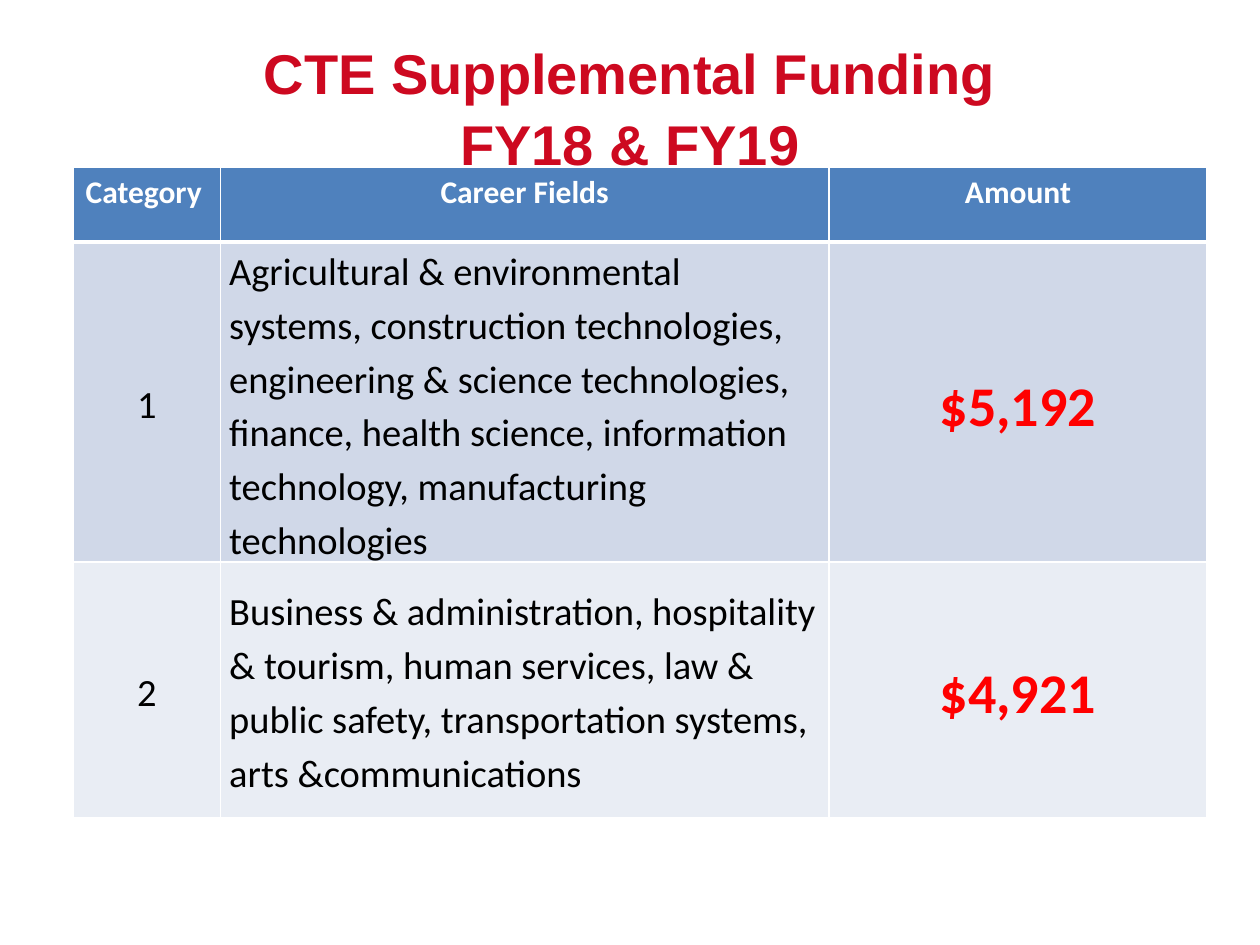
from lxml import etree
from pptx import Presentation
from pptx.dml.color import RGBColor
from pptx.enum.text import MSO_ANCHOR as Anchor, PP_ALIGN as Align
from pptx.oxml.ns import qn
from pptx.util import Inches, Pt

COLORS = {
    "title": "CD0920",
    "header": "4F81BD",
    "bands": ["D0D8E8", "E9EDF4"],
    "white": "FFFFFF",
    "text": "000000",
    "amount": "FF0000",
}
HEADERS = ["Category", "Career Fields", "Amount"]
FUNDING = [
    ("1", "Agricultural & environmental systems, construction technologies, "
          "engineering & science technologies, finance, health science, "
          "information technology, manufacturing technologies", "$5,192"),
    ("2", "Business & administration, hospitality & tourism, human services, "
          "law & public safety, transportation systems, arts &communications",
     "$4,921"),
]
COL_WIDTHS = [1.17, 4.83, 3]
ROW_HEIGHTS = [0.59, 2.54, 2.03]


class Deck:
    title_font = "Arial"
    body_font = "Calibri"

    def __init__(self, prs):
        self.slide = prs.slides.add_slide(prs.slide_layouts[6])

    def run(self, p, text, size, color, font, bold=False):
        r = p.add_run()
        r.text = text
        r.font.size, r.font.name, r.font.bold = Pt(size), font, bold
        r.font.color.rgb = RGBColor.from_string(color)

    def title(self, lines, left, top, width, height):
        sp = self.slide.shapes.add_textbox(
            Inches(left), Inches(top), Inches(width), Inches(height))
        tf = sp.text_frame
        tf.word_wrap = True
        tf.vertical_anchor = Anchor.MIDDLE
        tf.margin_left = tf.margin_right = tf.margin_top = tf.margin_bottom = 0
        p = tf.paragraphs[0]
        p.alignment, p.line_spacing = Align.CENTER, 1.05
        for i, line in enumerate(lines):
            if i:
                p.add_line_break()
            self.run(p, line, 32, COLORS["title"], self.title_font, bold=True)

    def table(self, left, top, col_widths, row_heights):
        table = self.slide.shapes.add_table(
            len(row_heights), len(col_widths), Inches(left), Inches(top),
            Inches(sum(col_widths)), Inches(sum(row_heights))).table
        for column, width in zip(table.columns, col_widths):
            column.width = Inches(width)
        for row, height in zip(table.rows, row_heights):
            row.height = Inches(height)
        return table

    def borders(self, cell, **widths):
        """Draw white borders; widths are points by side: L, R, T, B."""
        tc_pr = cell._tc.get_or_add_tcPr()
        for i, (side, width) in enumerate(widths.items()):
            ln = etree.Element(qn(f"a:ln{side}"), w=str(Pt(width)))
            fill = etree.SubElement(ln, qn("a:solidFill"))
            etree.SubElement(fill, qn("a:srgbClr"), val=COLORS["white"])
            tc_pr.insert(i, ln)

    def cell(self, cell, text, fill, size, color, bold, align):
        cell.fill.solid()
        cell.fill.fore_color.rgb = RGBColor.from_string(fill)
        p = cell.text_frame.paragraphs[0]
        p.alignment = align
        self.run(p, text, size, color, self.body_font, bold)
        return p

    def header_cell(self, cell, text, align):
        self.cell(cell, text, COLORS["header"], 18, COLORS["white"], True, align)
        self.borders(cell, L=1, R=1, T=1, B=3)

    def body_cell(self, cell, text, fill, top_border, align, amount):
        size, color = (32, COLORS["amount"]) if amount else (22, COLORS["text"])
        p = self.cell(cell, text, fill, size, color, amount, align)
        p.line_spacing = 1.15
        cell.vertical_anchor = Anchor.MIDDLE
        cell.margin_left = cell.margin_right = Inches(0.07)
        cell.margin_top = cell.margin_bottom = 0
        self.borders(cell, L=1, R=1, T=top_border, B=1)


def main():
    prs = Presentation()
    prs.slide_width, prs.slide_height = Inches(10), Inches(7.5)
    deck = Deck(prs)
    deck.title(["CTE Supplemental Funding", "FY18 & FY19"], 0.5, 0.3, 9, 1.08)

    table = deck.table(0.58, 1.33, COL_WIDTHS, ROW_HEIGHTS)
    for col, text in enumerate(HEADERS):
        align = Align.CENTER if col else Align.LEFT
        deck.header_cell(table.cell(0, col), text, align)
    for row, (values, fill) in enumerate(zip(FUNDING, COLORS["bands"]), 1):
        for col, text in enumerate(values):
            align = Align.LEFT if col == 1 else Align.CENTER
            deck.body_cell(table.cell(row, col), text, fill,
                           3 if row == 1 else 1, align, amount=col == 2)
    prs.save("out.pptx")


if __name__ == "__main__":
    main()
